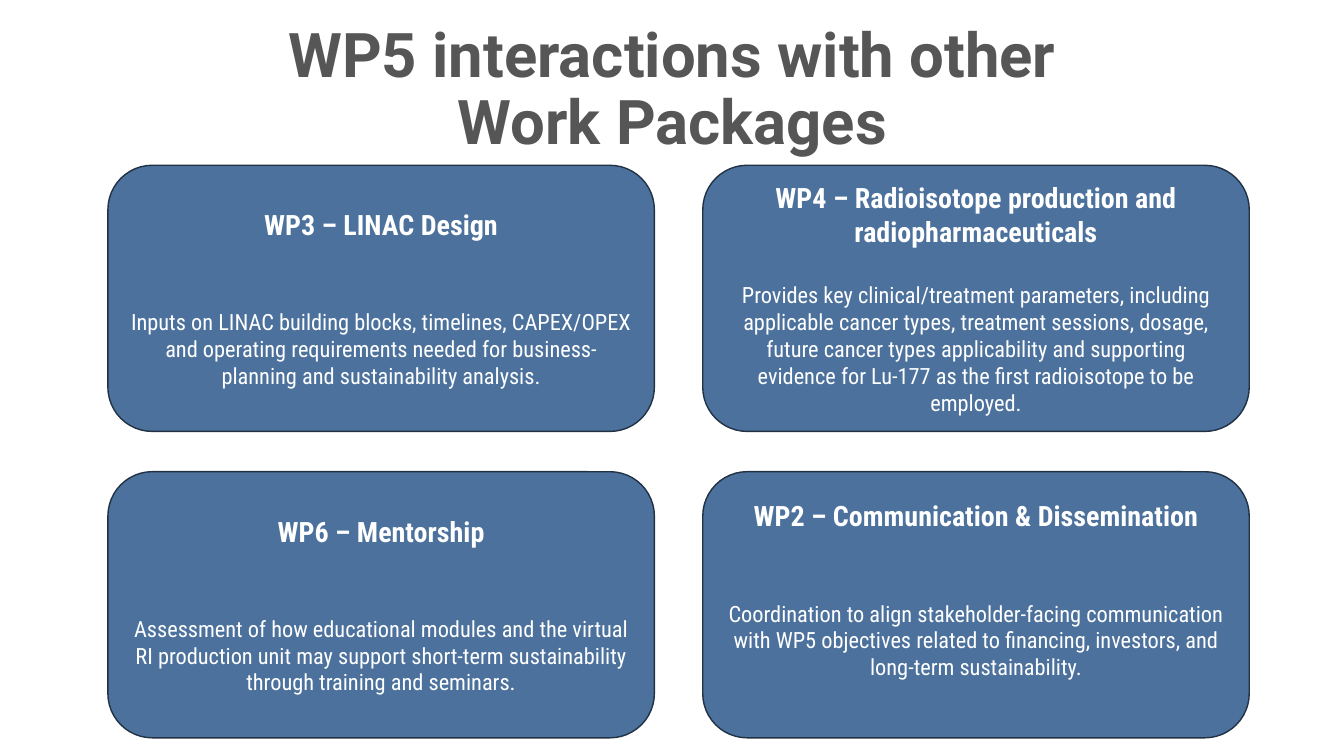
"""Build the slide on WP5 interactions with other work packages."""
from dataclasses import dataclass

from pptx import Presentation
from pptx.dml.color import RGBColor
from pptx.enum.shapes import MSO_SHAPE
from pptx.enum.text import MSO_ANCHOR, PP_ALIGN
from pptx.slide import Slide
from pptx.util import Inches, Pt

WHITE = RGBColor(0xFF, 0xFF, 0xFF)
GREY = RGBColor(0x56, 0x56, 0x56)
BLUE = RGBColor(0x4B, 0x71, 0x9C)
NAVY = RGBColor(0x21, 0x32, 0x44)

COLUMNS = 2
LEFT, TOP = 1.07, 1.64
WIDTH, HEIGHT = 5.42, 2.64
COLUMN_STEP, ROW_STEP = 5.9, 3.04


@dataclass(frozen=True)
class WorkPackage:
    heading: str
    body: str
    gap: float = 48
    bottom_inset: float = 0.05


WORK_PACKAGES = [
    WorkPackage(
        "WP3 – LINAC Design",
        "Inputs on LINAC building blocks, timelines, CAPEX/OPEX and operating "
        "requirements needed for business-planning and sustainability analysis.",
    ),
    WorkPackage(
        "WP4 – Radioisotope production and radiopharmaceuticals",
        "Provides key clinical/treatment parameters, including applicable cancer "
        "types, treatment sessions, dosage, future cancer types applicability and "
        "supporting evidence for Lu-177 as the first radioisotope to be employed.",
        gap=24,
    ),
    WorkPackage(
        "WP6 – Mentorship",
        "Assessment of how educational modules and the virtual RI production unit "
        "may support short-term sustainability through training and seminars.",
    ),
    WorkPackage(
        "WP2 – Communication & Dissemination",
        "Coordination to align stakeholder-facing communication with WP5 objectives "
        "related to financing, investors, and long-term sustainability.",
        bottom_inset=0.35,
    ),
]


def format_para(para, font: str, size: float, color: RGBColor, bold: bool) -> None:
    """Centre a paragraph and style all its runs."""
    para.alignment = PP_ALIGN.CENTER
    for span in para.runs:
        span.font.name = font
        span.font.size = Pt(size)
        span.font.bold = bold
        span.font.color.rgb = color


def add_title(page: Slide, text: str) -> None:
    """Add the bottom-anchored title."""
    box = page.shapes.add_textbox(Inches(0.92), Inches(-0.03), Inches(11.5), Inches(1.64))
    frame = box.text_frame
    frame.word_wrap = True
    frame.vertical_anchor = MSO_ANCHOR.BOTTOM
    para = frame.paragraphs[0]
    para.text = text
    para.line_spacing = 0.9
    format_para(para, "Roboto", 44, GREY, True)


def add_card(page: Slide, package: WorkPackage, left: float, top: float) -> None:
    """Add one rounded card with a heading and a body."""
    card = page.shapes.add_shape(
        MSO_SHAPE.ROUNDED_RECTANGLE, Inches(left), Inches(top), Inches(WIDTH), Inches(HEIGHT)
    )
    card.shadow.inherit = False
    card.fill.solid()
    card.fill.fore_color.rgb = BLUE
    card.line.color.rgb = NAVY
    card.line.width = Pt(1)
    frame = card.text_frame
    frame.word_wrap = True
    frame.vertical_anchor = MSO_ANCHOR.MIDDLE
    frame.margin_bottom = Inches(package.bottom_inset)
    heading = frame.paragraphs[0]
    heading.text = package.heading
    format_para(heading, "Roboto Condensed", 20, WHITE, True)
    body = frame.add_paragraph()
    body.text = package.body
    body.space_before = Pt(package.gap)
    format_para(body, "Roboto Condensed", 16, WHITE, False)


def main() -> None:
    """Create and save the deck."""
    deck = Presentation()
    deck.slide_width, deck.slide_height = Inches(13.33), Inches(7.5)
    page = deck.slides.add_slide(deck.slide_layouts[6])
    add_title(page, "WP5 interactions with other\vWork Packages")
    for index, package in enumerate(WORK_PACKAGES):
        row, column = divmod(index, COLUMNS)
        add_card(page, package, LEFT + column * COLUMN_STEP, TOP + row * ROW_STEP)
    deck.save("out.pptx")


if __name__ == "__main__":
    main()
